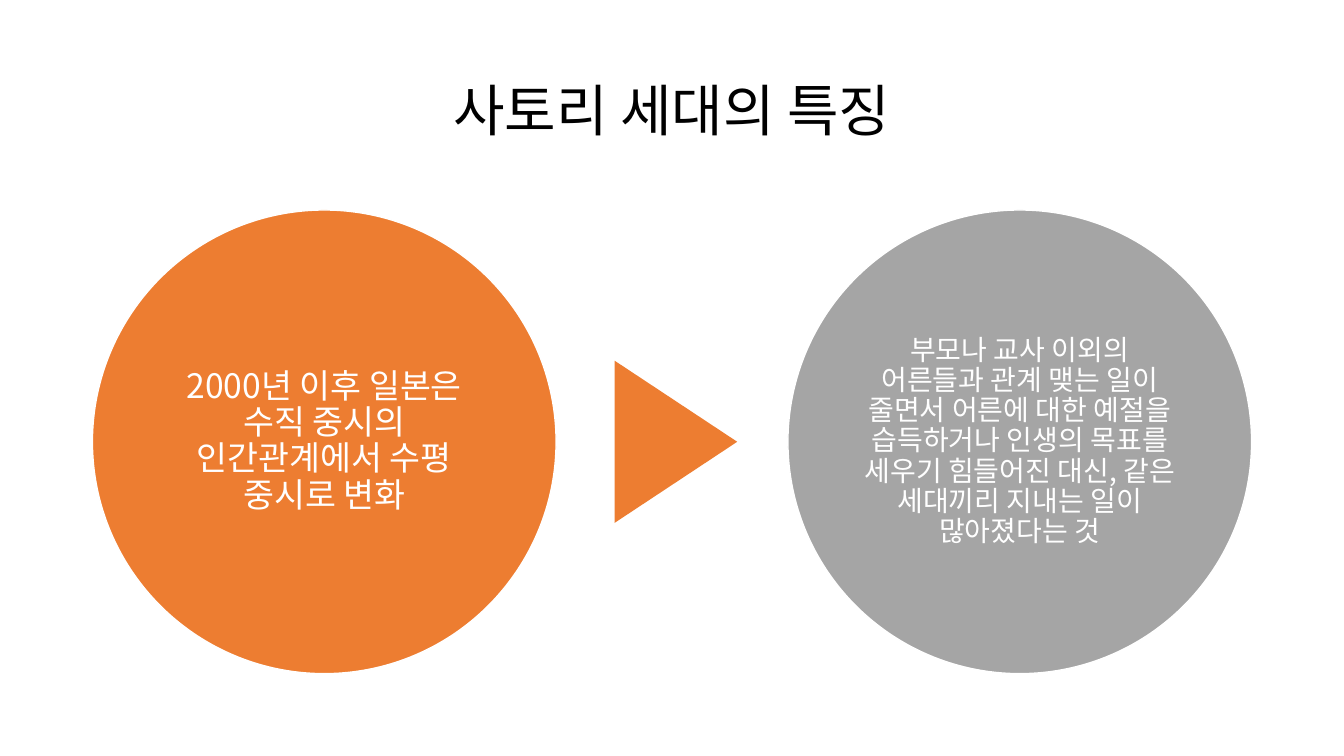
from lxml import etree
from pptx import Presentation
from pptx.dml.color import RGBColor
from pptx.enum.shapes import MSO_SHAPE
from pptx.enum.text import MSO_ANCHOR, PP_ALIGN
from pptx.oxml.ns import qn
from pptx.util import Inches, Pt

OVAL = MSO_SHAPE.OVAL
TRIANGLE = MSO_SHAPE.ISOSCELES_TRIANGLE
MIDDLE = MSO_ANCHOR.MIDDLE
CENTER = PP_ALIGN.CENTER

COLORS = {"black": "000000", "white": "FFFFFF", "orange": "ED7D31", "gray": "A5A5A5"}
FONT = "Noto Sans CJK KR"
COLUMNS, ROWS = 80, 45
MARGIN = 5.5
DIAMETER = 27.6
CIRCLE_TOP = 12.5
ARROW_WIDTH, ARROW_HEIGHT = 9.66, 7.3
CIRCLES = [
    ("2000년 이후 일본은 수직 중시의 인간관계에서 수평 중시로 변화", "orange", 24),
    ("부모나 교사 이외의 어른들과 관계 맺는 일이 줄면서 어른에 대한 예절을 "
     "습득하거나 인생의 목표를 세우기 힘들어진 대신, 같은 세대끼리 지내는 일이 "
     "많아졌다는 것", "gray", 20),
]


class SlideBuilder:
    """Draws styled elements on one slide, placed in grid columns and rows."""

    def __init__(self, presentation):
        self.slide = presentation.slides.add_slide(presentation.slide_layouts[6])
        self.column = presentation.slide_width / COLUMNS
        self.row = presentation.slide_height / ROWS

    def box(self, left, top, width, height):
        return (round(left * self.column), round(top * self.row),
                round(width * self.column), round(height * self.row))

    def set_text(self, shape, text, size, color, inset):
        frame = shape.text_frame
        frame.word_wrap = True
        frame.vertical_anchor = MIDDLE
        frame.margin_left = frame.margin_right = Inches(inset)
        frame.margin_top = frame.margin_bottom = Inches(inset)
        paragraph = frame.paragraphs[0]
        paragraph.text = text
        paragraph.alignment = CENTER
        paragraph.line_spacing = 0.9
        paragraph.font.size = Pt(size)
        paragraph.font.name = FONT
        paragraph.font.color.rgb = RGBColor.from_string(COLORS[color])
        properties = paragraph._p.get_or_add_pPr().find(qn("a:defRPr"))
        etree.SubElement(properties, qn("a:ea"), typeface=FONT)

    def title(self, text, left, top, width, height):
        shape = self.slide.shapes.add_textbox(*self.box(left, top, width, height))
        self.set_text(shape, text, 40, "black", 0.05)

    def shape(self, kind, color, left, top, width, height):
        shape = self.slide.shapes.add_shape(kind, *self.box(left, top, width, height))
        shape.shadow.inherit = False
        shape.fill.solid()
        shape.fill.fore_color.rgb = RGBColor.from_string(COLORS[color])
        shape.line.fill.background()
        return shape

    def circle(self, text, color, size, left):
        shape = self.shape(OVAL, color, left, CIRCLE_TOP, DIAMETER, DIAMETER)
        shape.line.color.rgb = RGBColor.from_string(COLORS["white"])
        shape.line.width = Pt(1)
        self.set_text(shape, text, size, "white", 0.03)

    def arrow(self, color, center_column, center_row):
        shape = self.shape(TRIANGLE, color, center_column - ARROW_WIDTH / 2,
                           center_row - ARROW_HEIGHT / 2, ARROW_WIDTH, ARROW_HEIGHT)
        shape.rotation = 90


def main():
    presentation = Presentation()
    presentation.slide_width = Inches(13.33)
    presentation.slide_height = Inches(7.5)
    builder = SlideBuilder(presentation)
    builder.title("사토리 세대의 특징", MARGIN, 2.4, COLUMNS - 2 * MARGIN, 8.7)
    step = COLUMNS - 2 * MARGIN - DIAMETER
    for index, (text, color, size) in enumerate(CIRCLES):
        builder.circle(text, color, size, MARGIN + index * step)
    builder.arrow("orange", 40.23, CIRCLE_TOP + DIAMETER / 2)
    presentation.save("out.pptx")


if __name__ == "__main__":
    main()
